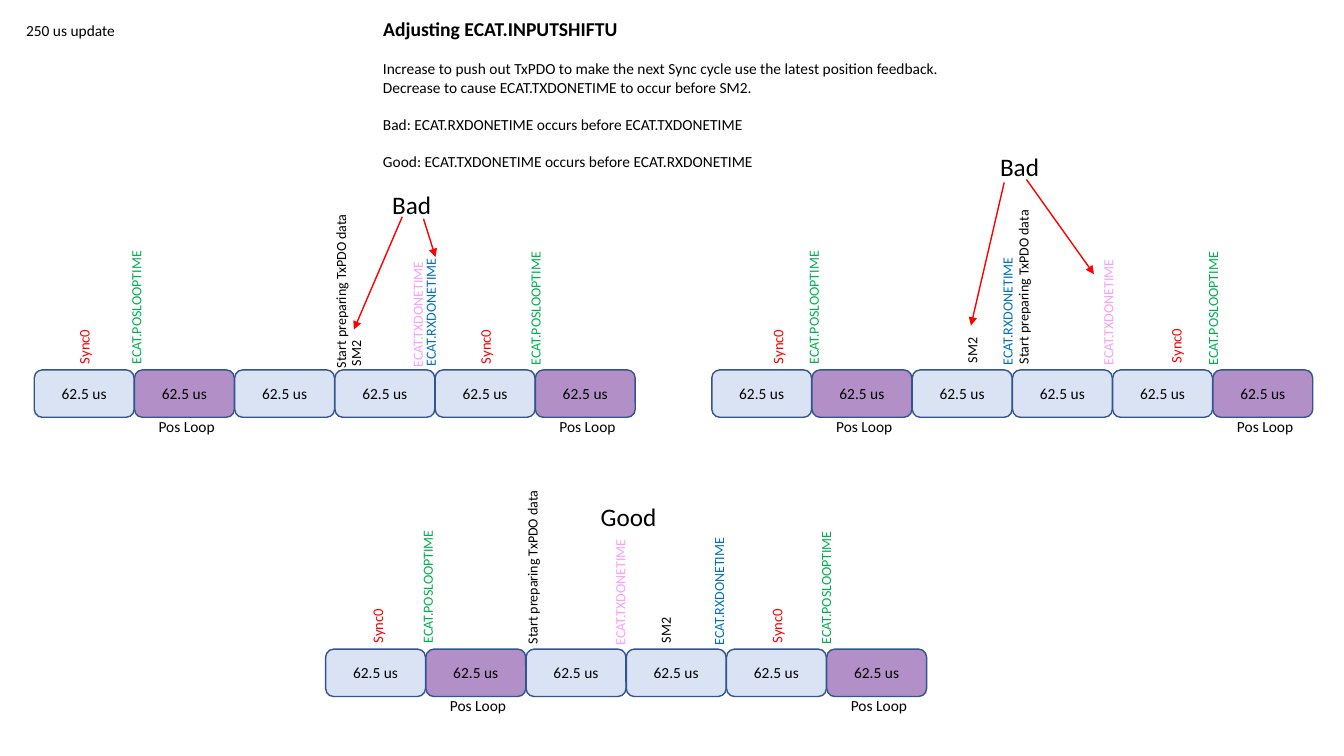
from lxml import etree
from pptx import Presentation
from pptx.dml.color import RGBColor
from pptx.enum.shapes import MSO_CONNECTOR, MSO_SHAPE
from pptx.enum.text import MSO_ANCHOR, MSO_AUTO_SIZE, PP_ALIGN
from pptx.oxml.ns import qn
from pptx.util import Inches, Pt

ROUNDED = MSO_SHAPE.ROUNDED_RECTANGLE
STRAIGHT = MSO_CONNECTOR.STRAIGHT
TOP, MIDDLE = MSO_ANCHOR.TOP, MSO_ANCHOR.MIDDLE
LEFT, CENTER = PP_ALIGN.LEFT, PP_ALIGN.CENTER
NO_AUTOSIZE = MSO_AUTO_SIZE.NONE

FONT = "Calibri"
COLORS = {
    "text": "000000", "cycle": "DAE3F3", "pos_loop": "B28FC7",
    "outline": "325491", "red": "FF0000", "green": "00B050",
    "blue": "0070C0", "pink": "FAA0FA",
}
CYCLE_COUNT = 6
POS_LOOP_CYCLES = (1, 5)
ROW_WIDTH, CYCLE_WIDTH, CYCLE_HEIGHT = 5.96, 0.99, 0.47
CYCLE_STEP = (ROW_WIDTH - CYCLE_WIDTH) / (CYCLE_COUNT - 1)
EVENT_HEIGHT = 0.27

EVENT_STYLES = {
    "Sync0": ("red", 10.5, 0.57),
    "SM2": ("text", 10, 0.47),
    "ECAT.TXDONETIME": ("pink", 10, 1.31),
    "ECAT.RXDONETIME": ("blue", 10, 1.31),
    "ECAT.POSLOOPTIME": ("green", 10, 1.4),
    "Start preparing TxPDO data": ("text", 10, 1.82),
}

TIMELINES = [
    {
        "origin": (0.34, 3.67),
        "events": [
            ("Sync0", 0.49, 0.04), ("Sync0", 4.47, 0.04),
            ("ECAT.TXDONETIME", 3.8, 0.07), ("SM2", 3.19, 0.06),
            ("ECAT.RXDONETIME", 3.93, 0.06),
            ("ECAT.POSLOOPTIME", 1.01, 0.04), ("ECAT.POSLOOPTIME", 4.97, 0.05),
            ("Start preparing TxPDO data", 3.04, 0.08),
        ],
        "verdict": ("Bad", 3.45, -1.84, 0.62),
        "arrows": [((3.86, -1.5), (3.98, -1.12)), ((3.65, -1.52), (3.17, -0.4))],
    },
    {
        "origin": (7.06, 3.67),
        "events": [
            ("Sync0", 0.65, 0.04), ("Sync0", 4.6, 0.03),
            ("ECAT.TXDONETIME", 3.93, 0.05), ("SM2", 2.58, 0.03),
            ("ECAT.RXDONETIME", 2.93, 0.05),
            ("ECAT.POSLOOPTIME", 1.01, 0.04), ("ECAT.POSLOOPTIME", 4.97, 0.05),
            ("Start preparing TxPDO data", 3.09, 0.04),
        ],
        "verdict": ("Bad", 2.76, -2.22, 0.62),
        "arrows": [((2.9, -1.86), (2.57, -0.44)), ((3.12, -1.89), (3.79, -0.95))],
    },
    {
        "origin": (3.23, 6.44),
        "events": [
            ("Sync0", 0.51, 0.04), ("Sync0", 4.47, 0.04),
            ("ECAT.TXDONETIME", 2.92, 0.06), ("SM2", 3.37, 0.04),
            ("ECAT.RXDONETIME", 3.9, 0.06),
            ("ECAT.POSLOOPTIME", 1.01, 0.04), ("ECAT.POSLOOPTIME", 4.96, 0.05),
            ("Start preparing TxPDO data", 2.05, 0.05),
        ],
        "verdict": ("Good", 2.63, -1.52, 0.79),
        "arrows": [],
    },
]

ADVICE = [
    ("Increase to push out TxPDO to make the next Sync cycle use the latest position feedback.", 0),
    ("Decrease to cause ECAT.TXDONETIME to occur before SM2.", 0),
    ("Bad: ECAT.RXDONETIME occurs before ECAT.TXDONETIME", 13.4),
    ("Good: ECAT.TXDONETIME occurs before ECAT.RXDONETIME", 13.4),
]


def color(name):
    return RGBColor.from_string(COLORS[name])


def format_text(text_frame, size, color_name="text", bold=False, alignment=LEFT):
    for paragraph in text_frame.paragraphs:
        paragraph.alignment = alignment
        for run in paragraph.runs:
            run.font.name = FONT
            run.font.size = Pt(size)
            run.font.bold = bold
            run.font.color.rgb = color(color_name)


def add_label(slide, text, box, size, color_name="text", wrap=False):
    label = slide.shapes.add_textbox(*(Inches(value) for value in box))
    label.text_frame.word_wrap = wrap
    label.text_frame.text = text
    format_text(label.text_frame, size, color_name)
    return label


def add_heading(slide, left, top, width):
    title = slide.shapes.title
    title.left, title.top = Inches(left), Inches(top)
    title.width, title.height = Inches(width), Inches(0.34)
    title.text_frame.text = "Adjusting ECAT.INPUTSHIFTU"
    title.text_frame.auto_size = NO_AUTOSIZE
    title.text_frame.vertical_anchor = TOP
    format_text(title.text_frame, 14, bold=True)

    advice_text = "\n".join(text for text, _ in ADVICE)
    advice = add_label(slide, advice_text, (left, top + 0.42, width, 1.21), 11, wrap=True)
    for paragraph, (_, gap) in zip(advice.text_frame.paragraphs, ADVICE):
        paragraph.space_before = Pt(gap)


def add_cycle(slide, left, top, fill_name):
    cycle = slide.shapes.add_shape(
        ROUNDED, Inches(left), Inches(top), Inches(CYCLE_WIDTH), Inches(CYCLE_HEIGHT))
    cycle.shadow.inherit = False
    cycle.fill.solid()
    cycle.fill.fore_color.rgb = color(fill_name)
    cycle.line.color.rgb = color("outline")
    cycle.line.width = Pt(1)
    cycle.text_frame.text = "62.5 us"
    cycle.text_frame.vertical_anchor = MIDDLE
    format_text(cycle.text_frame, 11, alignment=CENTER)


def add_event(slide, text, center, bottom):
    color_name, size, length = EVENT_STYLES[text]
    box = (center - length / 2, bottom - length / 2 - EVENT_HEIGHT / 2, length, EVENT_HEIGHT)
    add_label(slide, text, box, size, color_name).rotation = 270


def add_arrow(slide, start, end):
    arrow = slide.shapes.add_connector(
        STRAIGHT, *(Inches(value) for value in (*start, *end)))
    arrow.line.color.rgb = color("red")
    arrow.line.width = Pt(1)
    etree.SubElement(arrow.line._get_or_add_ln(), qn("a:tailEnd"), type="triangle")
    etree.SubElement(arrow._element.spPr, qn("a:effectLst"))


def add_timeline(slide, timeline):
    left, top = timeline["origin"]
    for index in range(CYCLE_COUNT):
        cycle_left = left + index * CYCLE_STEP
        is_pos_loop = index in POS_LOOP_CYCLES
        add_cycle(slide, cycle_left, top, "pos_loop" if is_pos_loop else "cycle")
        if is_pos_loop:
            add_label(slide, "Pos Loop", (cycle_left + 0.14, top + 0.42, 0.88, 0.29), 11)
    for text, center, drop in timeline["events"]:
        add_event(slide, text, left + center, top + drop)
    verdict, offset_x, offset_y, width = timeline["verdict"]
    add_label(slide, verdict, (left + offset_x, top + offset_y, width, 0.4), 18)
    for (start_x, start_y), (end_x, end_y) in timeline["arrows"]:
        add_arrow(slide, (left + start_x, top + start_y), (left + end_x, top + end_y))


def main():
    presentation = Presentation()
    presentation.slide_width = Inches(13.33)
    presentation.slide_height = Inches(7.5)
    slide = presentation.slides.add_slide(presentation.slide_layouts[5])
    add_heading(slide, 3.7, 0.12, 9)
    add_label(slide, "250 us update", (0.16, 0.16, 1.14, 0.29), 11)
    for timeline in TIMELINES:
        add_timeline(slide, timeline)
    presentation.save("out.pptx")


if __name__ == "__main__":
    main()
